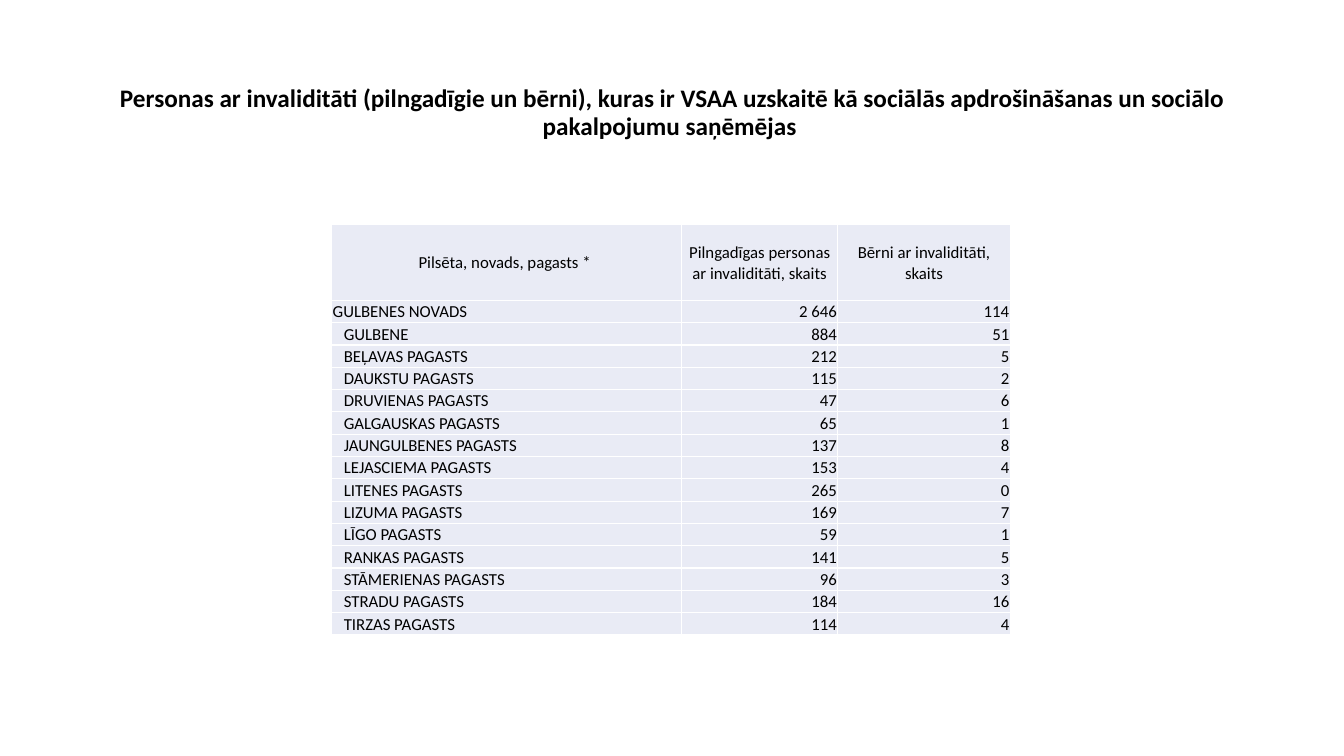
from pptx import Presentation
from pptx.dml.color import RGBColor as RGB
from pptx.enum.text import MSO_ANCHOR as Anchor, MSO_AUTO_SIZE as Auto, PP_ALIGN as Align
from pptx.oxml import parse_xml
from pptx.oxml.ns import nsdecls
from pptx.util import Inches, Pt

BLACK = RGB(0x00, 0x00, 0x00)
WHITE = RGB(0xFF, 0xFF, 0xFF)
PALE = RGB(0xE9, 0xEB, 0xF5)

TITLE = ("Personas ar invaliditāti (pilngadīgie un bērni), kuras ir VSAA uzskaitē "
         "kā sociālās apdrošināšanas un sociālo pakalpojumu saņēmējas ")
HEAD = ("Pilsēta, novads, pagasts * ",
        "Pilngadīgas personas ar invaliditāti, skaits",
        "Bērni ar invaliditāti, skaits")
ROWS = [
    ("GULBENES NOVADS", "2 646", "114"),
    ("GULBENE", "884", "51"),
    ("BEĻAVAS PAGASTS", "212", "5"),
    ("DAUKSTU PAGASTS", "115", "2"),
    ("DRUVIENAS PAGASTS", "47", "6"),
    ("GALGAUSKAS PAGASTS", "65", "1"),
    ("JAUNGULBENES PAGASTS", "137", "8"),
    ("LEJASCIEMA PAGASTS", "153", "4"),
    ("LITENES PAGASTS", "265", "0"),
    ("LIZUMA PAGASTS", "169", "7"),
    ("LĪGO PAGASTS", "59", "1"),
    ("RANKAS PAGASTS", "141", "5"),
    ("STĀMERIENAS PAGASTS", "96", "3"),
    ("STRADU PAGASTS", "184", "16"),
    ("TIRZAS PAGASTS", "114", "4"),
]


class Deck:
    """Holds the text style and the current slide."""

    def __init__(self, font):
        self.font = font
        self.prs = Presentation()
        self.prs.slide_width = Inches(13.33)
        self.prs.slide_height = Inches(7.5)
        self.slide = self.prs.slides.add_slide(self.prs.slide_layouts[5])

    def style(self, par, size, align, bold=False):
        par.alignment = align
        par.font.name = self.font
        par.font.size = Pt(size)
        par.font.bold = bold
        par.font.color.rgb = BLACK

    def title(self, text, left, top, width, height):
        box = self.slide.shapes.title
        box.left, box.top = Inches(left), Inches(top)
        box.width, box.height = Inches(width), Inches(height)
        frame = box.text_frame
        frame.text = text
        frame.word_wrap = True
        frame.auto_size = Auto.NONE
        frame.vertical_anchor = Anchor.MIDDLE
        frame.paragraphs[0].line_spacing = 0.9
        self.style(frame.paragraphs[0], 18, Align.CENTER, True)

    def cell(self, cell, text, align, inset):
        cell.text = text
        cell.vertical_anchor = Anchor.MIDDLE
        cell.margin_left = Inches(inset)
        cell.margin_top = cell.margin_right = Inches(0.01)
        cell.margin_bottom = 0
        self.style(cell.text_frame.paragraphs[0], 12, align)
        props = cell._tc.get_or_add_tcPr()
        for side in "LRTB":
            props.append(parse_xml(
                f'<a:ln{side} {nsdecls("a")} w="{Pt(1)}"><a:solidFill>'
                f'<a:srgbClr val="{WHITE}"/></a:solidFill></a:ln{side}>'))
        cell.fill.solid()
        cell.fill.fore_color.rgb = PALE

    def table(self, head, rows, left, top, widths, tall, height):
        grid = self.slide.shapes.add_table(
            len(rows) + 1, len(head), Inches(left), Inches(top),
            Inches(sum(widths)), Inches(height)).table
        for col, width in zip(grid.columns, widths):
            col.width = Inches(width)
        for row in grid.rows:
            row.height = Inches((height - tall) / len(rows))
        grid.rows[0].height = Inches(tall)
        for r, row in enumerate([head, *rows]):
            for c, text in enumerate(row):
                align = Align.CENTER if r == 0 else Align.RIGHT if c else Align.LEFT
                inset = 0.12 if r > 1 and c == 0 else 0.01
                self.cell(grid.cell(r, c), text, align, inset)

    def save(self):
        self.prs.save("out.pptx")


def main():
    deck = Deck("Calibri")
    deck.title(TITLE, 0.92, 0.4, 11.5, 1.45)
    deck.table(HEAD, ROWS, 3.29, 2.23, (3.47, 1.55, 1.71), 0.75, 4.07)
    deck.save()


if __name__ == "__main__":
    main()
